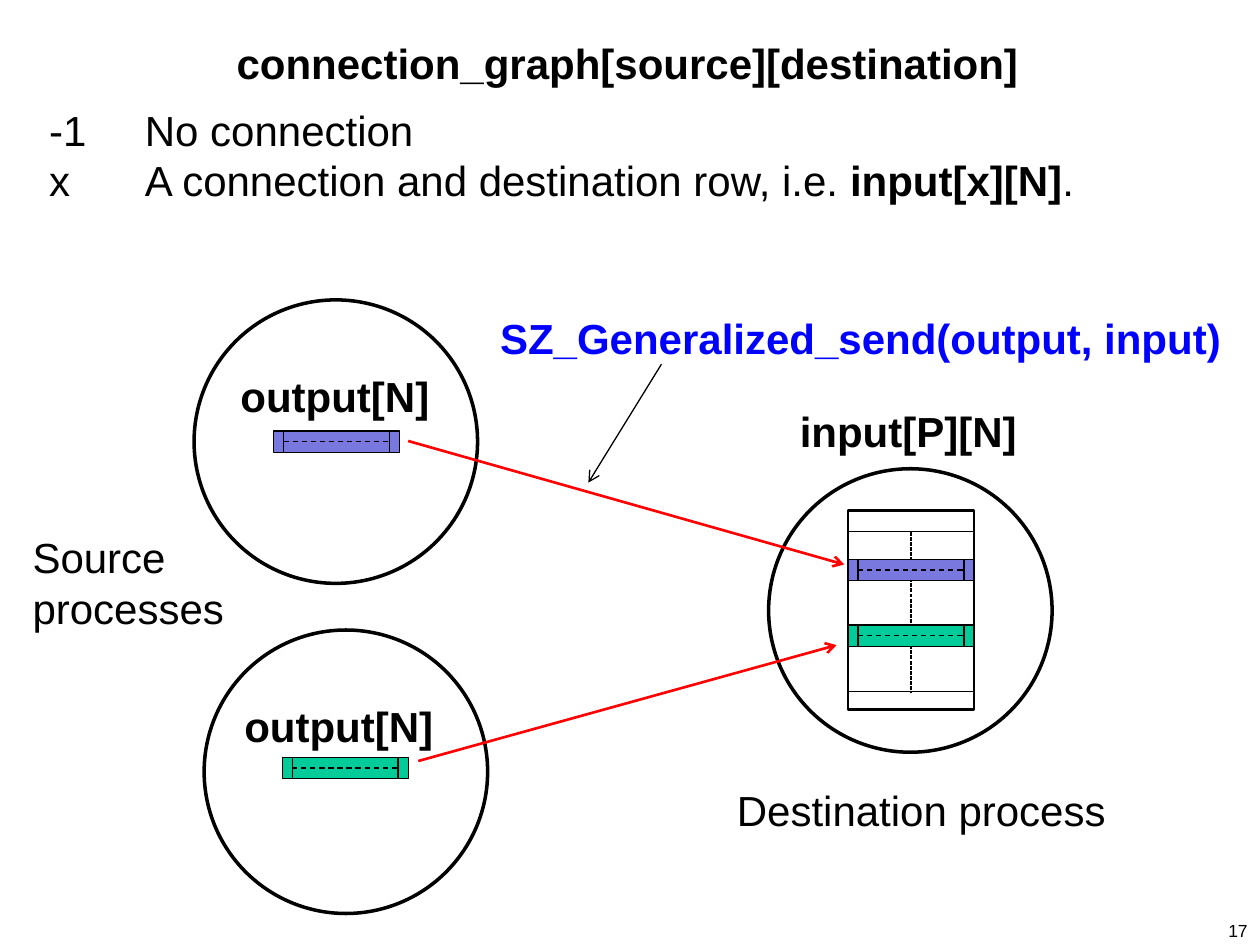
from lxml import etree
from pptx import Presentation
from pptx.dml.color import RGBColor
from pptx.enum.dml import MSO_LINE
from pptx.enum.shapes import MSO_CONNECTOR, MSO_SHAPE
from pptx.enum.text import MSO_ANCHOR, MSO_AUTO_SIZE, PP_ALIGN
from pptx.oxml.ns import qn
from pptx.util import Inches, Pt

STRAIGHT = MSO_CONNECTOR.STRAIGHT
RECT, OVAL = MSO_SHAPE.RECTANGLE, MSO_SHAPE.OVAL
DASH, SYS_DASH = MSO_LINE.DASH, MSO_LINE.SQUARE_DOT
LEFT, CENTER, RIGHT = PP_ALIGN.LEFT, PP_ALIGN.CENTER, PP_ALIGN.RIGHT
TOP, NO_FIT = MSO_ANCHOR.TOP, MSO_AUTO_SIZE.NONE
BLACK, RED, BLUE = "000000", "FF0000", "0000FF"
PURPLE, GREEN = "7878DE", "00CC99"
CIRCLE = 2.25
BAR_W, BAR_H, BAR_END = 1, 0.17, 0.08


def rgb(value):
    """Return the colour for a hex string."""
    return RGBColor.from_string(value)


def place(sp, left, top, width, height):
    """Set the position and size of a shape in inches."""
    sp.left, sp.top = Inches(left), Inches(top)
    sp.width, sp.height = Inches(width), Inches(height)


def add_run(p, text, size=24, bold=False, color=BLACK):
    """Add a formatted run to a paragraph."""
    r = p.add_run()
    r.text = text
    r.font.name = "Arial"
    r.font.size = Pt(size)
    r.font.bold = bold
    r.font.color.rgb = rgb(color)


def add_text(s, text, left, top, width, height=0.5, align=LEFT, wrap=True, **font):
    """Add a text box with one formatted paragraph."""
    tf = s.shapes.add_textbox(
        Inches(left), Inches(top), Inches(width), Inches(height)).text_frame
    tf.word_wrap = wrap
    p = tf.paragraphs[0]
    p.alignment = align
    add_run(p, text, **font)


def add_outlined(shapes, kind, left, top, width, height, weight, fill=None):
    """Add a black-outlined shape, filled or hollow."""
    sp = shapes.add_shape(
        kind, Inches(left), Inches(top), Inches(width), Inches(height))
    sp.shadow.inherit = False
    if fill:
        sp.fill.solid()
        sp.fill.fore_color.rgb = rgb(fill)
    else:
        sp.fill.background()
    sp.line.color.rgb = rgb(BLACK)
    sp.line.width = Pt(weight)


def add_line(shapes, x1, y1, x2, y2, color=BLACK, weight=0.75, dash=None, arrow=False):
    """Add a straight line, optionally dashed or ending in an arrow."""
    line = shapes.add_connector(
        STRAIGHT, Inches(x1), Inches(y1), Inches(x2), Inches(y2))
    line.line.color.rgb = rgb(color)
    line.line.width = Pt(weight)
    if dash:
        line.line.dash_style = dash
    if arrow:
        etree.SubElement(line.line._get_or_add_ln(), qn("a:tailEnd"), type="arrow")
    etree.SubElement(line._element.spPr, qn("a:effectLst"))


def add_bar(s, left, top, fill):
    """Add a grouped array bar with its first and last cells marked off."""
    shapes = s.shapes.add_group_shape().shapes
    first, last = left + BAR_END, left + BAR_W - BAR_END
    middle = top + BAR_H / 2
    add_outlined(shapes, RECT, left, top, BAR_W, BAR_H, 0.75, fill)
    for x in (first, last):
        add_line(shapes, x, top, x, top + BAR_H)
    add_line(shapes, first, middle, last, middle, dash=DASH)


def add_matrix(s, left, top, width, height):
    """Add the destination array with its first, last and received rows."""
    first, last = top + BAR_H, top + height - 0.14
    middle = left + width / 2
    add_outlined(s.shapes, RECT, left, top, width, height, 1.5)
    for y in (first, last):
        add_line(s.shapes, left, y, left + width, y)
    add_line(s.shapes, middle, first, middle, last, dash=SYS_DASH)
    add_bar(s, left, 4.44, PURPLE)
    add_bar(s, left, 4.96, GREEN)


def fill_title(s, text):
    """Place and fill the title."""
    sp = s.shapes.title
    place(sp, 0.04, 0.25, 9.88, 0.5)
    tf = sp.text_frame
    tf.auto_size, tf.vertical_anchor = NO_FIT, TOP
    p = tf.paragraphs[0]
    p.alignment = CENTER
    add_run(p, text, bold=True)


def fill_body(s, items):
    """Place the body and fill it with hanging-indent definitions."""
    sp = s.placeholders[1]
    place(sp, 0.29, 0.78, 9.6, 0.92)
    tf = sp.text_frame
    tf.auto_size, tf.vertical_anchor = NO_FIT, TOP
    for i, runs in enumerate(items):
        p = tf.add_paragraph() if i else tf.paragraphs[0]
        p.space_before = Pt(0)
        pPr = p._p.get_or_add_pPr()
        pPr.set("marL", str(Inches(0.76)))
        pPr.set("indent", str(-Inches(0.76)))
        etree.SubElement(pPr, qn("a:buNone"))
        for text, bold in runs:
            add_run(p, text, bold=bold)


def main():
    """Build and save the slide."""
    prs = Presentation()
    prs.slide_width, prs.slide_height = Inches(10), Inches(7.5)
    s = prs.slides.add_slide(prs.slide_layouts[1])
    fill_title(s, "connection_graph[source][destination]")
    fill_body(s, [
        [("-1\tNo connection", False)],
        [("x\tA connection and destination row, i.e. ", False),
         ("input[x][N]", True), (".", False)],
    ])

    for left, top in ((1.54, 2.38), (1.62, 5), (6.1, 3.72)):
        add_outlined(s.shapes, OVAL, left, top, CIRCLE, CIRCLE, 2)
    add_bar(s, 2.17, 3.42, PURPLE)
    add_bar(s, 2.24, 6.01, GREEN)
    add_matrix(s, 6.73, 4.05, BAR_W, 1.58)

    for ends in ((3.24, 3.5, 6.7, 4.48), (3.32, 6.04, 6.64, 5.12)):
        add_line(s.shapes, *ends, color=RED, weight=1.5, arrow=True)
    add_line(s.shapes, 5.25, 2.89, 4.67, 3.83, arrow=True)

    add_text(s, "Source processes", 0.16, 4.17, 1.91, 0.91)
    add_text(s, "Destination process", 5.75, 6.18, 3.16, wrap=False)
    for text, left, top, width in (("output[N]", 1.81, 2.89, 1.71),
                                   ("output[N]", 1.84, 5.51, 1.71),
                                   ("input[P][N]", 6.25, 3.17, 1.94)):
        add_text(s, text, left, top, width, wrap=False, bold=True)
    add_text(s, "SZ_Generalized_send(output, input)", 3.66, 2.43, 6.13,
             align=RIGHT, bold=True, color=BLUE)
    add_text(s, "17", 7.92, 7.25, 2.08, align=RIGHT, size=10)
    prs.save("out.pptx")


if __name__ == "__main__":
    main()
